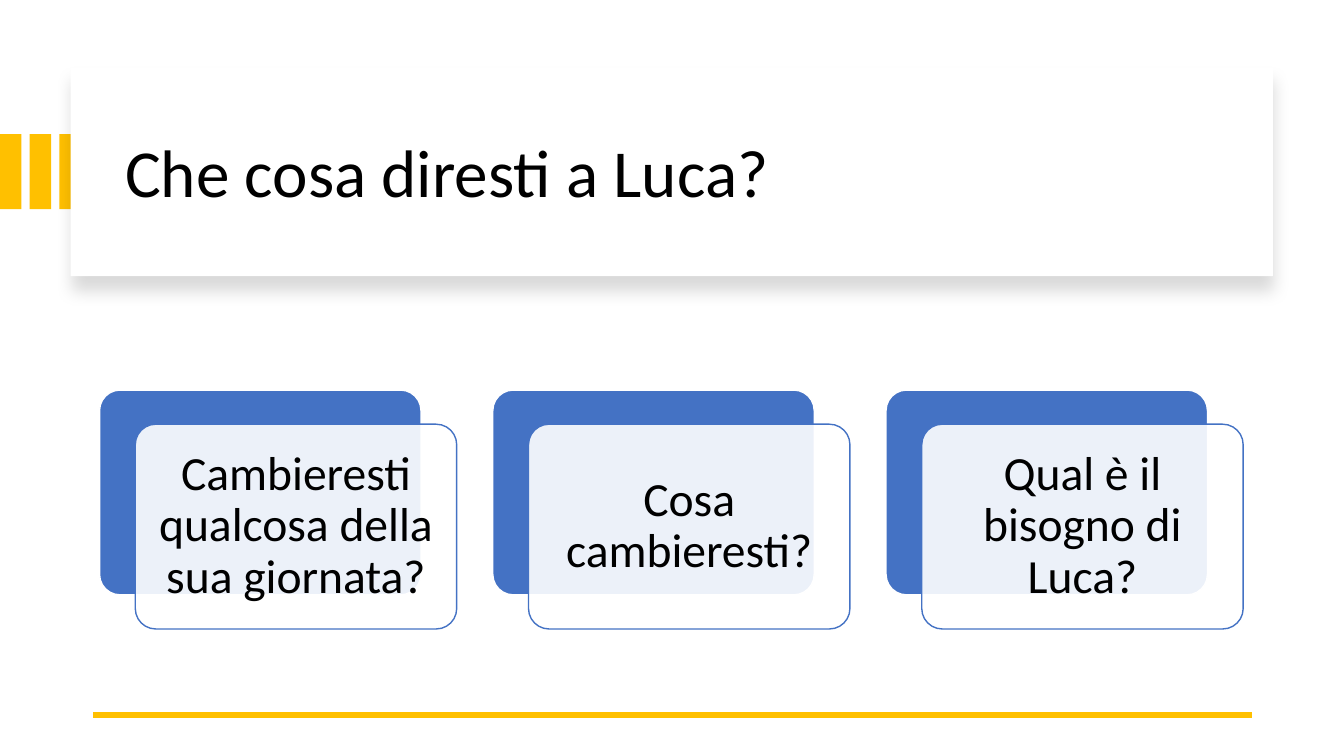
from lxml import etree
from pptx import Presentation
from pptx.dml.color import RGBColor
from pptx.enum.shapes import MSO_CONNECTOR, MSO_SHAPE
from pptx.enum.text import MSO_ANCHOR, PP_ALIGN
from pptx.oxml import parse_xml
from pptx.oxml.ns import nsdecls, qn
from pptx.util import Cm, Pt

TITLE = "Che cosa diresti a Luca?"
QUESTIONS = [
    "Cambieresti qualcosa della sua giornata?",
    "Cosa cambieresti?",
    "Qual è il bisogno di Luca?",
]

FONT = "Calibri"
BLACK = RGBColor(0x00, 0x00, 0x00)
WHITE = RGBColor(0xFF, 0xFF, 0xFF)
GOLD = RGBColor(0xFF, 0xC0, 0x00)
BLUE = RGBColor(0x44, 0x72, 0xC4)

RECTANGLE = MSO_SHAPE.RECTANGLE
ROUNDED = MSO_SHAPE.ROUNDED_RECTANGLE
STRAIGHT = MSO_CONNECTOR.STRAIGHT
MIDDLE = MSO_ANCHOR.MIDDLE
LEFT, CENTER = PP_ALIGN.LEFT, PP_ALIGN.CENTER

BAR_COUNT, BAR_PITCH = 3, 0.75
CARD_LEFT, CARD_TOP, CARD_PITCH = 2.51, 9.83, 9.91
CARD_WIDTH, CARD_HEIGHT = 8.1, 5.16
FRONT_SHIFT_X, FRONT_SHIFT_Y = 0.9, 0.86
CARD_INSET = Cm(0.35)


def add_box(slide, kind, left, top, width, height, fill, line=None):
    shape = slide.shapes.add_shape(kind, Cm(left), Cm(top), Cm(width), Cm(height))
    shape.shadow.inherit = False
    shape.fill.solid()
    shape.fill.fore_color.rgb = fill
    if line is None:
        shape.line.fill.background()
    else:
        shape.line.color.rgb = line
        shape.line.width = Pt(1)
    if kind == ROUNDED:
        shape.adjustments[0] = 0.1
    return shape


def write_text(shape, text, size, alignment):
    frame = shape.text_frame
    frame.word_wrap = True
    frame.vertical_anchor = MIDDLE
    paragraph = frame.paragraphs[0]
    paragraph.alignment = alignment
    paragraph.line_spacing = 0.9
    run = paragraph.add_run()
    run.text = text
    run.font.name = FONT
    run.font.size = Pt(size)
    run.font.color.rgb = BLACK


def add_title_panel(slide):
    panel = add_box(slide, RECTANGLE, 1.78, 1.7, 30.3, 5.26, WHITE)
    effects = panel.element.spPr.find(qn("a:effectLst"))
    effects.append(parse_xml(
        f'<a:outerShdw {nsdecls("a")} blurRad="{Pt(11)}" dist="{Pt(10)}" '
        'dir="5400000" algn="t" rotWithShape="0"><a:srgbClr val="000000">'
        '<a:alpha val="15000"/></a:srgbClr></a:outerShdw>'))
    title = slide.shapes.title
    title.left, title.top, title.width, title.height = Cm(2.9), Cm(2.26), Cm(28.27), Cm(4.32)
    write_text(title, TITLE, 48, LEFT)
    panel.element.addnext(title.element)


def add_bottom_rule(slide):
    rule = slide.shapes.add_connector(STRAIGHT, Cm(31.55), Cm(18.01), Cm(2.34), Cm(18.01))
    rule.line.color.rgb = GOLD
    rule.line.width = Pt(4.5)
    etree.SubElement(rule.element.spPr, qn("a:effectLst"))


def add_question_card(slide, left, question):
    add_box(slide, ROUNDED, left, CARD_TOP, CARD_WIDTH, CARD_HEIGHT, BLUE, WHITE)
    front = add_box(slide, ROUNDED, left + FRONT_SHIFT_X, CARD_TOP + FRONT_SHIFT_Y,
                    CARD_WIDTH, CARD_HEIGHT, WHITE, BLUE)
    color = front.element.spPr.find(qn("a:solidFill")).find(qn("a:srgbClr"))
    etree.SubElement(color, qn("a:alpha"), val="90000")
    frame = front.text_frame
    frame.margin_left = frame.margin_right = CARD_INSET
    frame.margin_top = frame.margin_bottom = CARD_INSET
    write_text(front, question, 34, CENTER)


def main():
    """Build the slide with a title panel and three question cards."""
    presentation = Presentation()
    presentation.slide_width, presentation.slide_height = Cm(33.87), Cm(19.05)
    slide = presentation.slides.add_slide(presentation.slide_layouts[5])
    for index in range(BAR_COUNT):
        add_box(slide, RECTANGLE, index * BAR_PITCH, 3.38, 0.54, 1.89, GOLD)
    add_title_panel(slide)
    add_bottom_rule(slide)
    for index, question in enumerate(QUESTIONS):
        add_question_card(slide, CARD_LEFT + index * CARD_PITCH, question)
    presentation.save("out.pptx")


if __name__ == "__main__":
    main()
